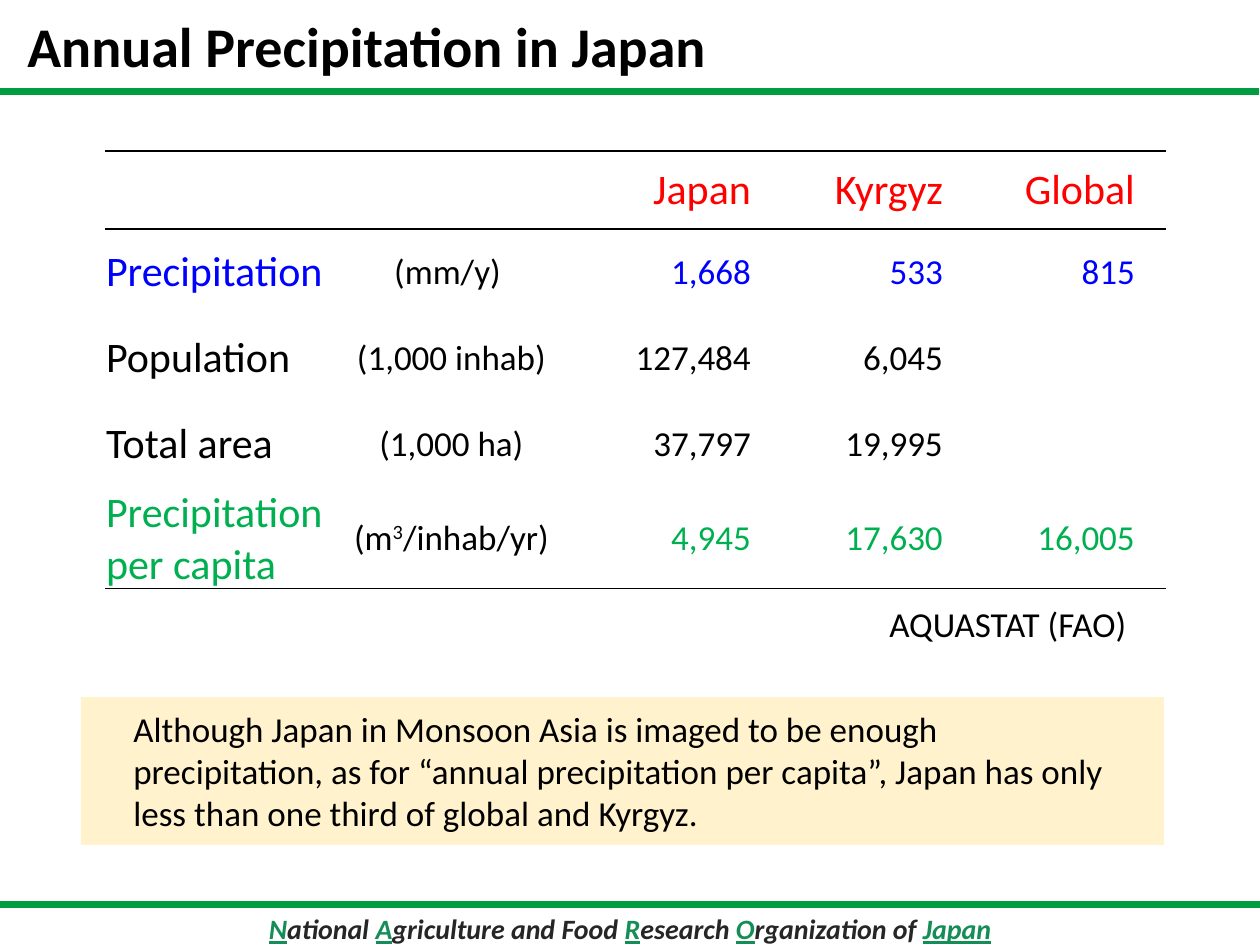
import pptx
import pptx.util
import pptx.dml.color
import pptx.enum.shapes
import pptx.enum.text
import pptx.oxml
import pptx.oxml.ns

SCALE = 914400 / 126
FONT = "Calibri"
BLACK, GREEN, BLUE, RED = "000000", "00B050", "0000FF", "FF0000"
BAR, MARK, GREY, CREAM = "009E41", "148D56", "262626", "FFF2CC"
ALIGN = pptx.enum.text.PP_ALIGN
ANCHOR = pptx.enum.text.MSO_ANCHOR
qn = pptx.oxml.ns.qn


def px(n):
    return pptx.util.Emu(round(n * SCALE))


def rgb(code):
    return pptx.dml.color.RGBColor.from_string(code)


def add_run(para, text, size, color, bold=False, italic=False, under=False):
    run = para.add_run()
    run.text = text
    font = run.font
    font.name, font.size = FONT, pptx.util.Pt(size)
    font.bold, font.italic, font.underline = bold, italic, under
    font.color.rgb = rgb(color)
    return run


def add_box(slide, box, wrap=True):
    frame = slide.shapes.add_textbox(*map(px, box)).text_frame
    frame.word_wrap = wrap
    return frame.paragraphs[0]


def add_bar(slide, left, top, width):
    line = slide.shapes.add_connector(
        pptx.enum.shapes.MSO_CONNECTOR.STRAIGHT,
        px(left), px(top), px(left + width), px(top))
    line.line.color.rgb = rgb(BAR)
    line.line.width = pptx.util.Pt(4)
    line._element.spPr.append(pptx.oxml.parse_xml(
        f"<a:effectLst {pptx.oxml.ns.nsdecls('a')}/>"))


def add_title(slide, left, top, width, height):
    add_bar(slide, left - 1, top + 92, width)
    para = add_box(slide, (left + 15, top + 13, 906, height))
    para.line_spacing = 0.9
    add_run(para, "Annual Precipitation in Japan", 32, BLACK, bold=True)


def add_foot(slide, left, top, width, height):
    add_bar(slide, left, top, width)
    para = add_box(slide, (left + 93, top, width - 186, height))
    para.alignment = ALIGN.CENTER
    parts = [("N", "ational "), ("A", "griculture and Food "),
             ("R", "esearch "), ("O", "rganization of "), ("Japan", "")]
    for key, rest in parts:
        add_run(para, key, 16, MARK, True, True, True)
        if rest:
            add_run(para, rest, 16, GREY, True, True)


def add_edge(cell, side):
    cell._tc.get_or_add_tcPr().append(pptx.oxml.parse_xml(
        f'<a:{side} {pptx.oxml.ns.nsdecls("a")} w="12700"><a:solidFill>'
        f'<a:srgbClr val="{BLACK}"/></a:solidFill></a:{side}>'))


def fill_cell(cell, text, size, color, align):
    cell.vertical_anchor = ANCHOR.MIDDLE
    cell.margin_left = cell.margin_right = cell.margin_top = px(1)
    cell.margin_bottom = 0
    frame = cell.text_frame
    for i, line in enumerate(text.split("\n")):
        para = frame.add_paragraph() if i else frame.paragraphs[0]
        para.alignment = align
        for j, part in enumerate(line.split("^")):
            run = add_run(para, part, size, color)
            if j == 1:
                run.font._element.set("baseline", "30000")


def add_grid(slide, left, top):
    cols = [238, 217, 192, 192, 192, 29]
    highs = [78, 86, 86, 86, 92]
    rows = [
        (RED, ["", "", "Japan", "Kyrgyz", "Global", ""]),
        (BLUE, ["Precipitation", "(mm/y) ", "1,668", "533", "815", ""]),
        (BLACK, ["Population", "(1,000 inhab)", "127,484", "6,045", "", ""]),
        (BLACK, ["Total area", "(1,000 ha)", "37,797", "19,995", "", ""]),
        (GREEN, ["Precipitation\nper capita", "(m^3^/inhab/yr)",
                 "4,945", "17,630", "16,005", ""]),
    ]
    table = slide.shapes.add_table(
        len(rows), len(cols), px(left), px(top),
        px(sum(cols)), px(sum(highs))).table
    table.first_row = table.horz_banding = False
    style = table._tbl.tblPr.find(qn("a:tableStyleId"))
    style.text = "{2D5ABB26-0587-4C30-8999-92F81FD0307C}"
    for col, width in zip(table.columns, cols):
        col.width = px(width)
    for r, (color, texts) in enumerate(rows):
        table.rows[r].height = px(highs[r])
        for c, text in enumerate(texts):
            cell = table.cell(r, c)
            if r == 0:
                add_edge(cell, "lnT")
            if r in (0, len(rows) - 1):
                add_edge(cell, "lnB")
            cell.fill.background()
            if text:
                size = 24 if r == 0 or c == 0 else 20
                align = {0: ALIGN.LEFT, 1: ALIGN.CENTER}.get(c, ALIGN.RIGHT)
                fill_cell(cell, text, size, BLACK if c == 1 else color, align)


def add_cite(slide, box):
    add_run(add_box(slide, box, False), "AQUASTAT (FAO)", 20, BLACK)


def add_note(slide, left, top, width, height):
    panel = slide.shapes.add_shape(
        pptx.enum.shapes.MSO_SHAPE.RECTANGLE,
        *map(px, (left, top, width, height)))
    panel.shadow.inherit = False
    panel.fill.solid()
    panel.fill.fore_color.rgb = rgb(CREAM)
    panel.line.fill.background()
    para = add_box(slide, (left + 40, top + 4, width - 63, height - 8))
    add_run(para, "Although Japan in Monsoon Asia is imaged to be enough "
            "precipitation, as for “annual precipitation per capita”, Japan "
            "has only less than one third of global and Kyrgyz.", 20, BLACK)


def main():
    deck = pptx.Presentation()
    deck.slide_width, deck.slide_height = px(1260), px(945)
    slide = deck.slides.add_slide(deck.slide_layouts[6])
    add_title(slide, 0, 0, 1260, 69)
    add_foot(slide, 0, 905, 1260, 47)
    add_grid(slide, 105, 151)
    add_cite(slide, (877, 596, 287, 55))
    add_note(slide, 81, 697, 1083, 148)
    deck.save("out.pptx")


if __name__ == "__main__":
    main()
